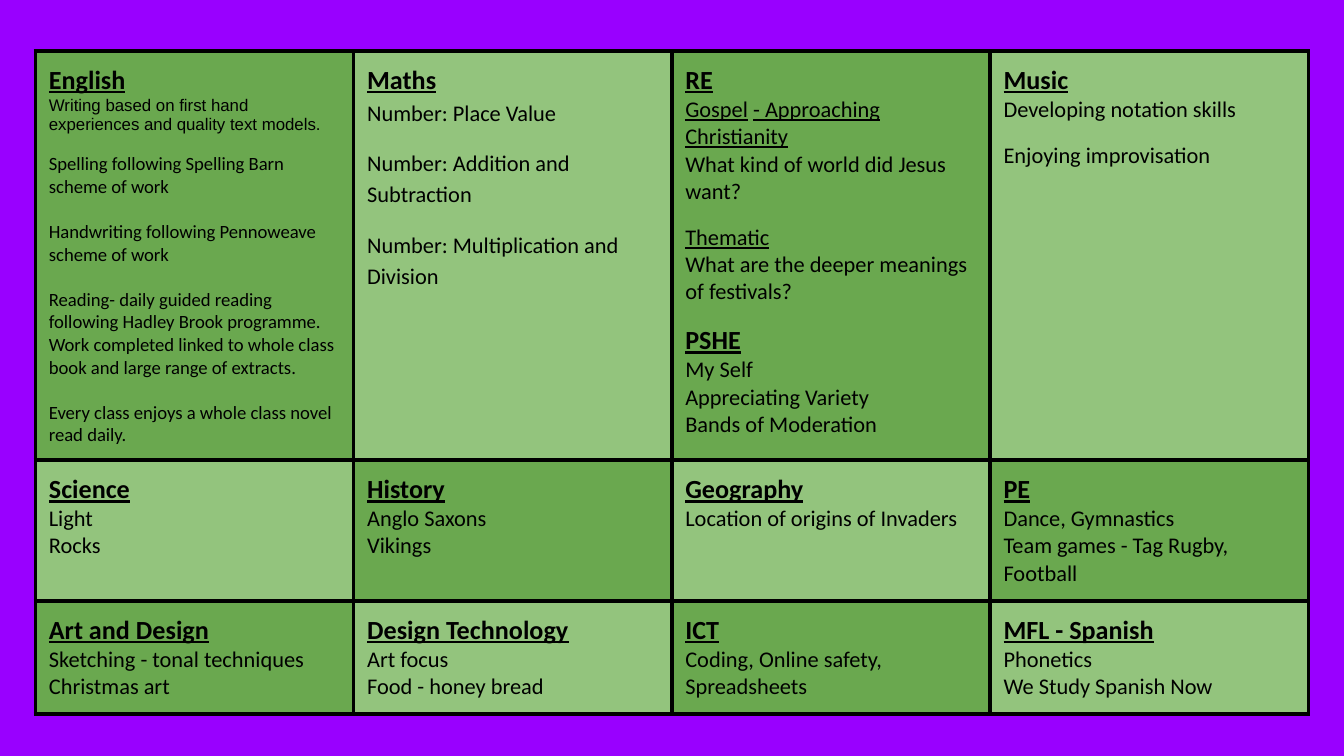
import lxml.etree
import pptx
import pptx.dml.color
import pptx.oxml.ns
import pptx.util

Pt = pptx.util.Pt

PURPLE = "9900FF"
GREENS = ("6AA84F", "93C47D")
BLACK = "000000"

COLUMN_WIDTH = 170.5
ROW_HEIGHTS = (205.2, 60, 60)
CELL_MARGIN = 7.2
BORDER_WIDTH = 2.25

HEADING = {"size": 14, "bold": True, "underline": True}
UNDERLINED = {"underline": True}
SPACED = {"before": 10}
LOOSE = {"line_spacing": 1.15}
SMALL = {"size": 10, "before": 12}

# Each cell lists its paragraphs: plain text, or (text, format).
# A text may itself be a list of (text, underline) spans.
SUBJECTS = [
    [
        [
            ("English", HEADING),
            ("Writing based on first hand experiences and quality text models.",
             {"size": 9, "font": "Arial"}),
            ("Spelling following Spelling Barn scheme of work", {"size": 10, "before": 10.3}),
            ("Handwriting following Pennoweave scheme of work", SMALL),
            ("Reading- daily guided reading following Hadley Brook programme. "
             "Work completed linked to whole class book and large range of extracts.", SMALL),
            ("Every class enjoys a whole class novel read daily.", SMALL),
        ],
        [
            ("Maths", HEADING),
            ("Number: Place Value", LOOSE),
            ("Number: Addition and Subtraction", LOOSE | SPACED),
            ("Number: Multiplication and Division", LOOSE | SPACED),
        ],
        [
            ("RE", HEADING),
            ([("Gospel", True), (" ", False), ("- Approaching Christianity", True)], {}),
            "What kind of world did Jesus want?",
            ("Thematic", UNDERLINED | SPACED),
            "What are the deeper meanings of festivals?",
            ("PSHE", HEADING | SPACED),
            "My Self",
            "Appreciating Variety",
            "Bands of Moderation",
        ],
        [
            ("Music", HEADING),
            "Developing notation skills",
            ("Enjoying improvisation", SPACED),
        ],
    ],
    [
        [("Science", HEADING), "Light", "Rocks"],
        [("History", HEADING), "Anglo Saxons", "Vikings"],
        [("Geography", HEADING), "Location of origins of Invaders"],
        [("PE", HEADING), "Dance, Gymnastics", "Team games - Tag Rugby, Football"],
    ],
    [
        [("Art and Design", HEADING), "Sketching - tonal techniques", "Christmas art"],
        [("Design Technology", HEADING), "Art focus", "Food - honey bread"],
        [("ICT", HEADING), "Coding, Online safety, Spreadsheets"],
        [("MFL - Spanish", HEADING), "Phonetics", "We Study Spanish Now"],
    ],
]


def set_fill(fill, color):
    fill.solid()
    fill.fore_color.rgb = pptx.dml.color.RGBColor.from_string(color)


def write_paragraph(para, text, size=12, font="Calibri", bold=False, underline=False,
                    before=0, line_spacing=1.0):
    """Write text, either a string or a list of (text, underline) spans."""
    para.space_before = Pt(before)
    para.line_spacing = line_spacing
    spans = [(text, underline)] if isinstance(text, str) else text
    for words, underlined in spans:
        span = para.add_run()
        span.text = words
        span.font.size = Pt(size)
        span.font.name = font
        span.font.bold = bold
        span.font.underline = underlined
        set_fill(span.font.fill, BLACK)


def add_borders(cell):
    properties = cell._tc.get_or_add_tcPr()
    qn = pptx.oxml.ns.qn
    for index, side in enumerate(("lnL", "lnR", "lnT", "lnB")):
        line = lxml.etree.Element(qn(f"a:{side}"), w=str(Pt(BORDER_WIDTH)))
        fill = lxml.etree.SubElement(line, qn("a:solidFill"))
        lxml.etree.SubElement(fill, qn("a:srgbClr"), val=BLACK)
        lxml.etree.SubElement(line, qn("a:prstDash"), val="solid")
        properties.insert(index, line)


def fill_cell(cell, paragraphs, color):
    cell.margin_left = cell.margin_right = Pt(CELL_MARGIN)
    cell.margin_top = cell.margin_bottom = Pt(CELL_MARGIN)
    set_fill(cell.fill, color)
    add_borders(cell)
    frame = cell.text_frame
    for index, entry in enumerate(paragraphs):
        text, text_format = (entry, {}) if isinstance(entry, str) else entry
        para = frame.add_paragraph() if index else frame.paragraphs[0]
        write_paragraph(para, text, **text_format)


def add_subject_table(page, left, top):
    column_count = len(SUBJECTS[0])
    table = page.shapes.add_table(
        len(SUBJECTS), column_count, Pt(left), Pt(top),
        Pt(COLUMN_WIDTH * column_count), Pt(sum(ROW_HEIGHTS))).table
    table.first_row = False
    table.horz_banding = False
    for column in table.columns:
        column.width = Pt(COLUMN_WIDTH)
    for row, height in zip(table.rows, ROW_HEIGHTS):
        row.height = Pt(height)
    for row_index, subjects in enumerate(SUBJECTS):
        for column_index, paragraphs in enumerate(subjects):
            color = GREENS[(row_index + column_index) % 2]
            fill_cell(table.cell(row_index, column_index), paragraphs, color)


def main():
    deck = pptx.Presentation()
    deck.slide_width, deck.slide_height = Pt(720), Pt(405)
    page = deck.slides.add_slide(deck.slide_layouts[6])
    set_fill(page.background.fill, PURPLE)
    add_subject_table(page, left=19, top=27.3)
    deck.save("out.pptx")


if __name__ == "__main__":
    main()
